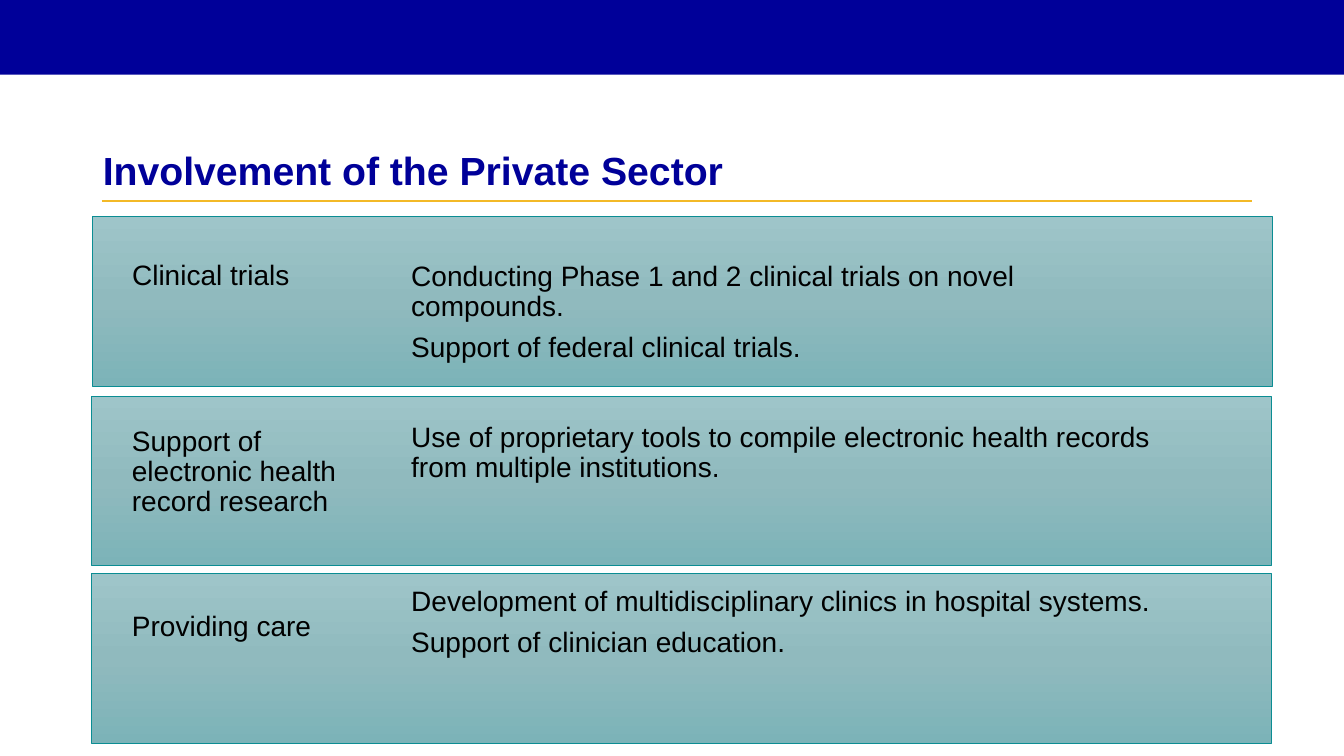
"""Builds the slide on private sector involvement."""
from copy import deepcopy

from pptx import Presentation
from pptx.dml.color import RGBColor
from pptx.enum import shapes, text
from pptx.oxml import ns
from pptx.util import Inches, Pt

COLORS = {
    "navy": "000099",
    "gold": "F3B927",
    "teal_edge": "0B8D93",
    "black": "000000",
}
PANEL_STOPS = [(0, "9EC5C9"), (0.5, "90BABE"), (1, "7CB3B8")]
FONT = "Arial"
TITLE = "Involvement of the Private Sector"
TOPICS = [
    {
        "label": "Clinical trials",
        "details": ["Conducting Phase 1 and 2 clinical trials on novel compounds.",
                    "Support of federal clinical trials."],
        "panel_at": (0.92, 2.15), "label_top": 2.54, "details_top": 2.55,
    },
    {
        "label": "Support of electronic health record research",
        "details": ["Use of proprietary tools to compile electronic health records "
                    "from multiple institutions."],
        "panel_at": (0.91, 3.93), "label_top": 4.19, "details_top": 4.15,
    },
    {
        "label": "Providing care",
        "details": ["Development of multidisciplinary clinics in hospital systems.",
                    "Support of clinician education."],
        "panel_at": (0.91, 5.69), "label_top": 6.03, "details_top": 5.78,
    },
]
SLIDE_SIZE = (13.33, 7.5)
PANEL_SIZE = (11.7, 1.68)
LABEL_LEFT, LABEL_SIZE = 1.21, (2.48, 1.26)
DETAILS_LEFT, DETAILS_SIZE = 3.98, (7.62, 1.21)


def rgb(name):
    return RGBColor.from_string(COLORS[name])


def place(shape, left, top, width, height):
    shape.left, shape.top = Inches(left), Inches(top)
    shape.width, shape.height = Inches(width), Inches(height)


def write(shape, lines, size, color, bold=False, anchor=text.MSO_ANCHOR.TOP):
    frame = shape.text_frame
    frame.word_wrap = True
    frame.auto_size = text.MSO_AUTO_SIZE.NONE
    frame.vertical_anchor = anchor
    for number, line in enumerate(lines):
        paragraph = frame.add_paragraph() if number else frame.paragraphs[0]
        properties = paragraph._p.get_or_add_pPr()
        properties.set("marL", "0")
        properties.set("indent", "0")
        properties.append(properties.makeelement(ns.qn("a:buNone")))
        paragraph.alignment = text.PP_ALIGN.LEFT
        paragraph.line_spacing = 0.9
        paragraph.space_before = Pt(7.5 if number else 0)
        run = paragraph.add_run()
        run.text = line
        run.font.name, run.font.size, run.font.bold = FONT, Pt(size), bold
        run.font.color.rgb = rgb(color)


def add_rectangle(slide, left, top, width, height):
    rectangle = slide.shapes.add_shape(
        shapes.MSO_SHAPE.RECTANGLE,
        Inches(left), Inches(top), Inches(width), Inches(height))
    rectangle.shadow.inherit = False
    return rectangle


def add_panel(slide, left, top):
    panel = add_rectangle(slide, left, top, *PANEL_SIZE)
    panel.line.color.rgb = rgb("teal_edge")
    panel.line.width = Pt(0.5)
    panel.fill.gradient()
    panel.fill.gradient_angle = 270
    stop_list = panel.element.spPr.find(".//" + ns.qn("a:gsLst"))
    stop_list.insert(1, deepcopy(stop_list[0]))
    for stop, (position, color) in zip(panel.fill.gradient_stops, PANEL_STOPS):
        stop.position = position
        stop.color.rgb = RGBColor.from_string(color)


def add_text(slide, lines, left, top, size):
    box = slide.shapes.add_textbox(0, 0, 0, 0)
    place(box, left, top, *size)
    write(box, lines, 20, "black")


def main():
    deck = Presentation()
    deck.slide_width, deck.slide_height = map(Inches, SLIDE_SIZE)
    slide = deck.slides.add_slide(deck.slide_layouts[1])
    title, first_label = slide.placeholders

    banner = add_rectangle(slide, 0, 0, SLIDE_SIZE[0], 0.74)
    banner.fill.solid()
    banner.fill.fore_color.rgb = rgb("navy")
    banner.line.fill.background()

    rule = slide.shapes.add_connector(
        shapes.MSO_CONNECTOR.STRAIGHT,
        Inches(1.01), Inches(1.99), Inches(12.42), Inches(1.99))
    rule.line.color.rgb = rgb("gold")
    rule.line.width = Pt(1.5)
    properties = rule.element.spPr
    properties.append(properties.makeelement(ns.qn("a:effectLst")))

    for topic in reversed(TOPICS):
        add_panel(slide, *topic["panel_at"])

    for placeholder in (title, first_label):
        slide.shapes.element.append(placeholder.element)
    place(title, 0.92, 1.32, 11.5, 0.65)
    write(title, [TITLE], 28, "navy", bold=True, anchor=text.MSO_ANCHOR.BOTTOM)

    place(first_label, LABEL_LEFT, TOPICS[0]["label_top"], *LABEL_SIZE)
    write(first_label, [TOPICS[0]["label"]], 20, "black")
    for topic in TOPICS[1:]:
        add_text(slide, [topic["label"]], LABEL_LEFT, topic["label_top"], LABEL_SIZE)
    for topic in TOPICS:
        add_text(slide, topic["details"], DETAILS_LEFT, topic["details_top"], DETAILS_SIZE)

    deck.save("out.pptx")


if __name__ == "__main__":
    main()
